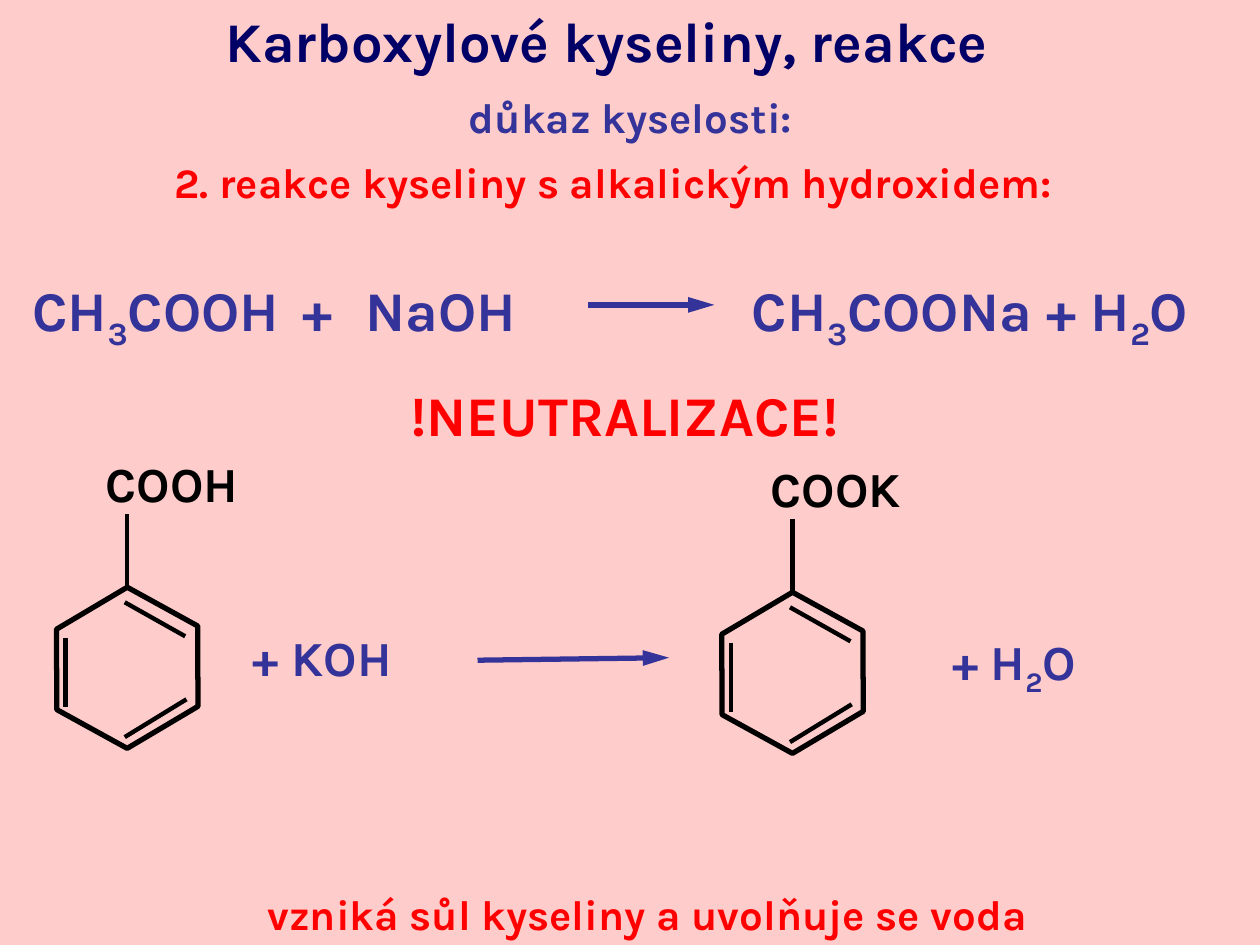
from lxml.etree import SubElement
from pptx import Presentation
from pptx.dml.color import RGBColor
from pptx.enum.shapes import MSO_CONNECTOR as Connector, MSO_SHAPE as Shape
from pptx.enum.text import MSO_ANCHOR as Anchor, MSO_AUTO_SIZE as AutoSize, PP_ALIGN as Align
from pptx.oxml.ns import qn
from pptx.util import Pt

PX = 9144
color = RGBColor.from_string
BLUE, NAVY, RED, BLACK = "333399", "000066", "FF0000", "000000"
SUB = {"baseline": "-25000"}
WIDE = {"spc": "530"}

deck = Presentation()
deck.slide_width, deck.slide_height = 1000 * PX, 750 * PX
slide = deck.slides.add_slide(deck.slide_layouts[5])
slide.background.fill.solid()
slide.background.fill.fore_color.rgb = color("FFCCCC")
shapes = slide.shapes


def write(box, place, runs, size, ink, align=Align.LEFT, spacing=1.0):
    box.left, box.top, box.width, box.height = (n * PX for n in place)
    frame = box.text_frame
    frame.word_wrap = True
    frame.auto_size = AutoSize.NONE
    frame.vertical_anchor = Anchor.TOP
    paragraph = frame.paragraphs[0]
    paragraph.alignment = align
    paragraph.line_spacing = spacing
    for text, traits in runs:
        run = paragraph.add_run()
        run.text = text
        run.font.name, run.font.size, run.font.bold = "Karla", Pt(size), True
        run.font.color.rgb = color(ink)
        for key, value in traits.items():
            run._r.get_or_add_rPr().set(key, value)


def draw_line(ends, ink, weight, arrow=False):
    line = shapes.add_connector(Connector.STRAIGHT, *(n * PX for n in ends))
    line.line.color.rgb = color(ink)
    line.line.width = Pt(weight)
    if arrow:
        outline = line._element.spPr.find(qn("a:ln"))
        SubElement(outline, qn("a:tailEnd"), type="triangle", w="med", len="lg")
    SubElement(line._element.spPr, qn("a:effectLst"))


write(shapes.title, (169, 0, 669, 63), [("Karboxylové kyseliny, reakce", {})], 32, NAVY)

for place, text, size, ink in [
    ((14, 68, 973, 50), "důkaz kyselosti:", 24, BLUE),
    ((0, 119, 973, 50), "2. reakce kyseliny s alkalickým hydroxidem:", 24, RED),
    ((178, 297, 636, 63), "!NEUTRALIZACE!", 32, RED),
    ((27, 700, 973, 50), "vzniká sůl kyseliny a uvolňuje se voda", 24, RED),
]:
    write(shapes.add_textbox(0, 0, 0, 0), place, [(text, {})], size, ink, Align.CENTER)

for place, runs, size in [
    ((16, 219, 506, 53),
     [("CH", {}), ("3", SUB), ("COOH", {}), (" + ", WIDE), ("NaOH", {})], 32),
    ((587, 219, 413, 53),
     [("CH", {}), ("3", SUB), ("COONa + H", {}), ("2", SUB), ("O", {})], 32),
    ((191, 502, 164, 47), [("+ KOH", {})], 28),
    ((746, 501, 164, 47), [("+ H", {}), ("2", SUB), ("O", {})], 28),
]:
    write(shapes.add_textbox(0, 0, 0, 0), place, runs, size, BLUE, spacing=0.8)

for reaction_arrow in [(467, 242, 567, 242), (379, 524, 531, 522)]:
    draw_line(reaction_arrow, BLUE, 3, arrow=True)

for group, dx, dy in [("COOH", 0, 0), ("COOK", 528, 4)]:
    ring = shapes.add_shape(Shape.HEXAGON, (36 + dx) * PX, (475 + dy) * PX, 130 * PX, 110 * PX)
    ring.adjustments[0] = 0.294
    ring.rotation = 329.3
    ring.shadow.inherit = False
    ring.fill.background()
    ring.line.color.rgb = color(BLACK)
    ring.line.width = Pt(3)
    for x1, y1, x2, y2 in [
        (52, 506, 52, 561),
        (148, 555, 99, 585),
        (99, 478, 147, 505),
        (101, 408, 101, 466),
    ]:
        draw_line((x1 + dx, y1 + dy, x2 + dx, y2 + dy), BLACK, 2.5)
    write(shapes.add_textbox(0, 0, 0, 0), (74 + dx, 355 + dy, 136, 57), [(group, {})], 28, BLACK)

deck.save("out.pptx")
